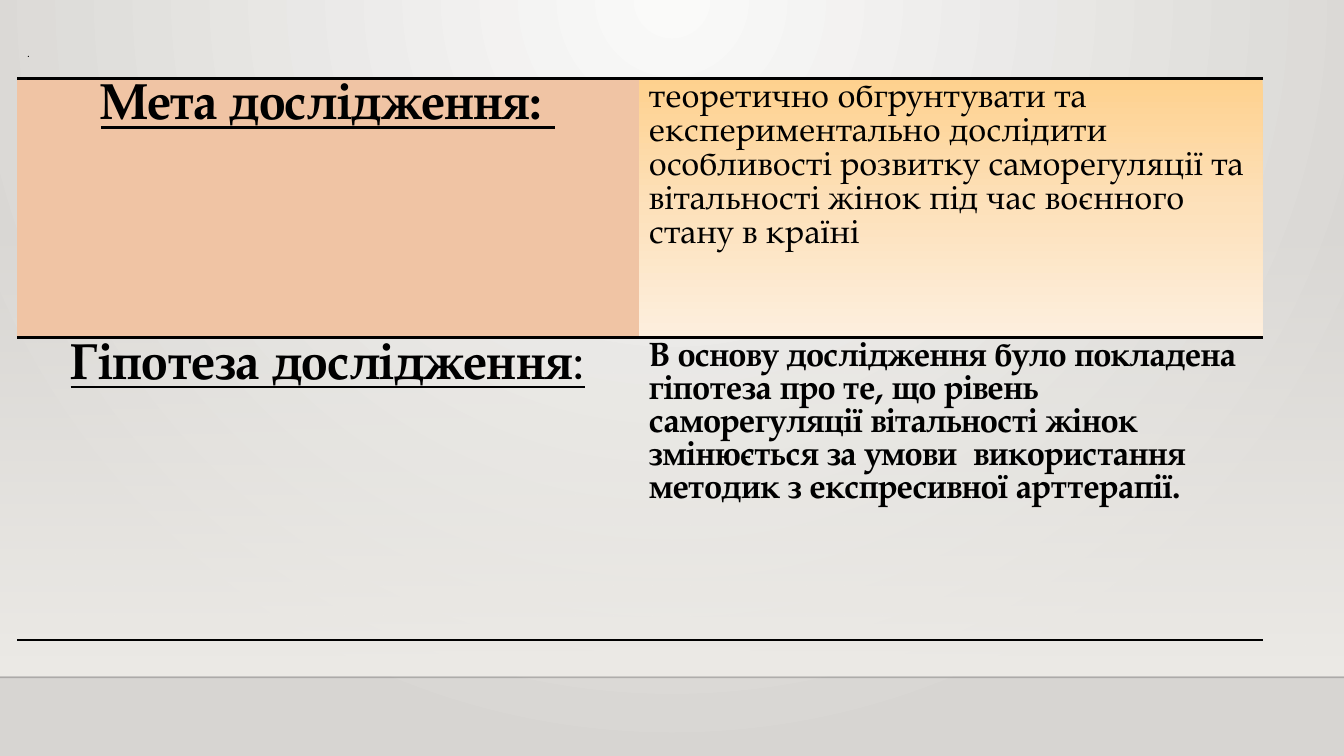
"""Build the slide with the aim and the hypothesis of the study."""
from pptx import Presentation
from pptx.dml.color import RGBColor
from pptx.enum.shapes import MSO_CONNECTOR as CONN, MSO_SHAPE as SHAPE
from pptx.enum.text import MSO_ANCHOR as ANCHOR, MSO_AUTO_SIZE as AUTO, PP_ALIGN as ALIGN
from pptx.oxml import parse_xml
from pptx.oxml.ns import nsdecls
from pptx.util import Cm, Pt

FONT = "TeX Gyre Pagella"
COLORS = {
    "text": "000000", "rule": "000000", "floor": "000001", "aim": "F0C4A4",
    "light": "FAFAF9", "dark": "D7D5D2", "panel": "EDEBE7",
    "amber": "FED18E", "peach": "FDE1BB", "cream": "FDEFDE",
}
HEADING = {"size": Pt(36), "bold": True, "underline": True}
COLON = {"size": Pt(36), "bold": False, "underline": True}
PLAIN = {"size": Pt(24), "bold": False, "underline": False}
STRONG = {"size": Pt(24), "bold": True, "underline": False}
TITLE = [(".", {"size": Pt(8), "bold": False})]
ROWS = [
    [
        [("Мета дослідження: ", HEADING)],
        [("теоретично обгрунтувати та експериментально дослідити особливості "
          "розвитку саморегуляції та вітальності жінок під час воєнного стану в країні", PLAIN)],
    ],
    [
        [("Гіпотеза дослідження", HEADING), (":", COLON)],
        [("В основу дослідження було покладена гіпотеза про те, що рівень "
          "саморегуляції вітальності жінок змінюється за умови  використання "
          "методик з експресивної арттерапії.", STRONG)],
    ],
]
WIDTH, HEIGHT = 33.87, 19.05
LEFT, TOP = 0.43, 1.98
COL_WIDTHS = [15.67, 15.72]
ROW_HEIGHTS = [6.53, 7.62]
FLOOR = 17.07
DOWN = '<a:lin ang="5400000" scaled="0"/>'
RADIAL = '<a:path path="circle"><a:fillToRect l="43000" r="43000" b="100000"/></a:path>'


def gradient(stops, direction):
    """Return gradient XML for (position, colour name, opacity) stops."""
    stops = "".join(
        f'<a:gs pos="{pos * 1000}"><a:srgbClr val="{COLORS[name]}">'
        f'<a:alpha val="{alpha * 1000}"/></a:srgbClr></a:gs>'
        for pos, name, alpha in stops)
    return (f'<a:gradFill {nsdecls("a")} rotWithShape="1">'
            f'<a:gsLst>{stops}</a:gsLst>{direction}</a:gradFill>')


def write(p, runs, align):
    """Fill a paragraph with formatted runs."""
    p.alignment = align
    for text, fmt in runs:
        r = p.add_run()
        r.text = text
        for key, value in {"name": FONT, **fmt}.items():
            setattr(r.font, key, value)
        r.font.color.rgb = RGBColor.from_string(COLORS["text"])


def add_rule(cell, side):
    """Draw a border on one side of a cell."""
    cell._tc.get_or_add_tcPr().append(parse_xml(
        f'<a:{side} {nsdecls("a")} w="{Pt(2)}"><a:solidFill>'
        f'<a:srgbClr val="{COLORS["rule"]}"/></a:solidFill></a:{side}>'))


def add_backdrop(s):
    """Add the background, the light panel and the floor line."""
    fill = gradient([(0, "light", 100), (100, "dark", 100)], RADIAL)
    s._element.cSld.insert(0, parse_xml(
        f'<p:bg {nsdecls("p", "a")}><p:bgPr>{fill}<a:effectLst/></p:bgPr></p:bg>'))
    sp = s.shapes.add_shape(SHAPE.RECTANGLE, 0, Cm(5.59), Cm(WIDTH), Cm(11.43))
    sp.shadow.inherit = False
    sp.line.fill.background()
    sp._element.spPr.insert(2, parse_xml(
        gradient([(0, "panel", 0), (100, "panel", 100)], DOWN)))
    line = s.shapes.add_connector(CONN.STRAIGHT, 0, Cm(FLOOR), Cm(WIDTH), Cm(FLOOR))
    line.line.width = Pt(1)
    line.line.color.rgb = RGBColor.from_string(COLORS["floor"])
    color = line._element.spPr.find(".//{*}srgbClr")
    color.append(parse_xml(f'<a:alpha {nsdecls("a")} val="20000"/>'))
    line._element.spPr.append(parse_xml(f'<a:effectLst {nsdecls("a")}/>'))


def add_title(s):
    """Place the title and write it."""
    sp = s.shapes.title
    place = {"left": 0.43, "top": 0.61, "width": 25.15, "height": 1.02}
    for key, value in place.items():
        setattr(sp, key, Cm(value))
    tf = sp.text_frame
    tf.auto_size, tf.vertical_anchor = AUTO.NONE, ANCHOR.BOTTOM
    p = tf.paragraphs[0]
    p.line_spacing = 0.9
    write(p, TITLE, ALIGN.LEFT)


def add_study_table(s):
    """Add the two-by-two table of headings and statements."""
    table = s.shapes.add_table(len(ROWS), len(COL_WIDTHS), Cm(LEFT), Cm(TOP),
                               Cm(sum(COL_WIDTHS)), Cm(sum(ROW_HEIGHTS))).table
    table.first_row = table.horz_banding = False
    table._tbl.tblPr.find("{*}tableStyleId").text = "{2D5ABB26-0587-4C30-8999-92F81FD0307C}"
    for col, width in zip(table.columns, COL_WIDTHS):
        col.width = Cm(width)
    for row, height in zip(table.rows, ROW_HEIGHTS):
        row.height = Cm(height)
    for i, row in enumerate(ROWS):
        for j, runs in enumerate(row):
            cell = table.cell(i, j)
            write(cell.text_frame.paragraphs[0], runs, ALIGN.LEFT if j else ALIGN.CENTER)
            add_rule(cell, "lnT")
            add_rule(cell, "lnB")
    for cell in table.rows[1].cells:
        cell.fill.background()
    aim, statement = table.rows[0].cells
    aim.fill.solid()
    aim.fill.fore_color.rgb = RGBColor.from_string(COLORS["aim"])
    statement._tc.get_or_add_tcPr().append(parse_xml(gradient(
        [(0, "amber", 100), (50, "peach", 100), (100, "cream", 100)], DOWN)))


def main():
    """Build and save the presentation."""
    prs = Presentation()
    prs.slide_width, prs.slide_height = Cm(WIDTH), Cm(HEIGHT)
    s = prs.slides.add_slide(prs.slide_layouts[5])
    add_backdrop(s)
    add_title(s)
    add_study_table(s)
    prs.save("out.pptx")


if __name__ == "__main__":
    main()
